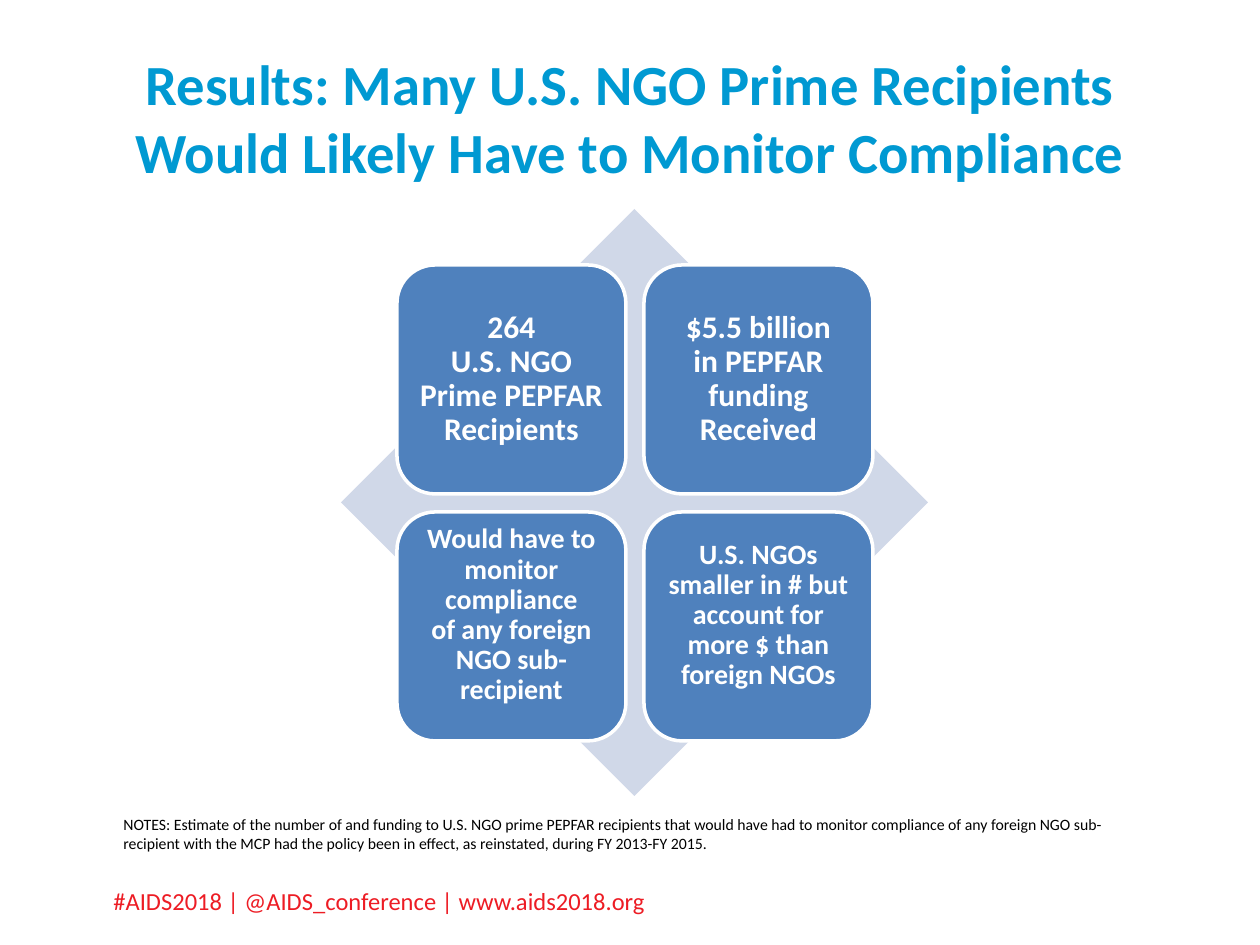
from pptx import Presentation
from pptx.dml.color import RGBColor
from pptx.enum.shapes import MSO_SHAPE
from pptx.enum.text import MSO_ANCHOR, PP_ALIGN
from pptx.util import Pt

DIAMOND, ROUNDED = MSO_SHAPE.DIAMOND, MSO_SHAPE.ROUNDED_RECTANGLE
TOP, MIDDLE = MSO_ANCHOR.TOP, MSO_ANCHOR.MIDDLE
LEFT, CENTER = PP_ALIGN.LEFT, PP_ALIGN.CENTER
SCALE = 914400 / 126  # EMU per px
COLORS = {"title": "0099D2", "footer": "ED1C24", "notes": "000000",
          "diamond": "D0D8E8", "card": "4F81BD", "white": "FFFFFF"}


def px(*lengths):
    return [round(length * SCALE) for length in lengths]


def write(box, lines, size, color, bold=False, align=LEFT, anchor=TOP, spacing=None):
    frame = box.text_frame
    frame.word_wrap = True
    frame.vertical_anchor = anchor
    for i, line in enumerate(lines):
        para = frame.add_paragraph() if i else frame.paragraphs[0]
        para.alignment = align
        para.line_spacing = spacing
        span = para.add_run()
        span.text = line
        span.font.name = "Calibri"
        span.font.size = Pt(size)
        span.font.bold = bold
        span.font.color.rgb = RGBColor.from_string(COLORS[color])


deck = Presentation()
deck.slide_width, deck.slide_height = px(1260, 945)
page = deck.slides.add_slide(deck.slide_layouts[6])

# Footer, title and notes
footer = page.shapes.add_textbox(*px(101, 880, 915, 43))
write(footer, ["#AIDS2018 | @AIDS_conference | www.aids2018.org"], 14, "footer")
title = page.shapes.add_textbox(*px(63, 38, 1134, 158))
write(title, ["Results: Many U.S. NGO Prime Recipients Would Likely Have to Monitor Compliance"],
      32.4, "title", True, CENTER, MIDDLE)
notes = page.shapes.add_textbox(*px(111, 809, 1027, 50))
write(notes, ["NOTES: Estimate of the number of and funding to U.S. NGO prime PEPFAR recipients "
              "that would have had to monitor compliance of any foreign NGO sub-recipient with "
              "the MCP had the policy been in effect, as reinstated, during FY 2013-FY 2015."],
      9, "notes")

# Diamond behind the cards
diamond = page.shapes.add_shape(DIAMOND, *px(341, 209, 587, 587))
diamond.shadow.inherit = False
diamond.fill.solid()
diamond.fill.fore_color.rgb = RGBColor.from_string(COLORS["diamond"])
diamond.line.fill.background()

# Two by two cards: the lower row has smaller text, set a little higher
CARD_LEFT, CARD_TOP, CARD_SIZE, CARD_STEP = 397, 265, 229, 247
ROWS = [
    (18, 9, 9, [["264", "U.S. NGO Prime PEPFAR Recipients"],
                ["$5.5 billion", "in PEPFAR funding Received"]]),
    (16, 0, 22, [["Would have to monitor compliance", "of any foreign NGO sub-recipient"],
                 ["U.S. NGOs smaller in # but account for more $ than foreign NGOs"]]),
]
for row, (size, inset_top, inset_bottom, cards) in enumerate(ROWS):
    for column, lines in enumerate(cards):
        card = page.shapes.add_shape(ROUNDED, *px(
            CARD_LEFT + column * CARD_STEP, CARD_TOP + row * CARD_STEP, CARD_SIZE, CARD_SIZE))
        card.shadow.inherit = False
        card.fill.solid()
        card.fill.fore_color.rgb = RGBColor.from_string(COLORS["card"])
        card.line.color.rgb = RGBColor.from_string(COLORS["white"])
        card.line.width = Pt(2)
        frame = card.text_frame
        frame.margin_left, frame.margin_right = px(9, 9)
        frame.margin_top, frame.margin_bottom = px(inset_top, inset_bottom)
        write(card, lines, size, "white", True, CENTER, MIDDLE, 0.9)

deck.save("out.pptx")
